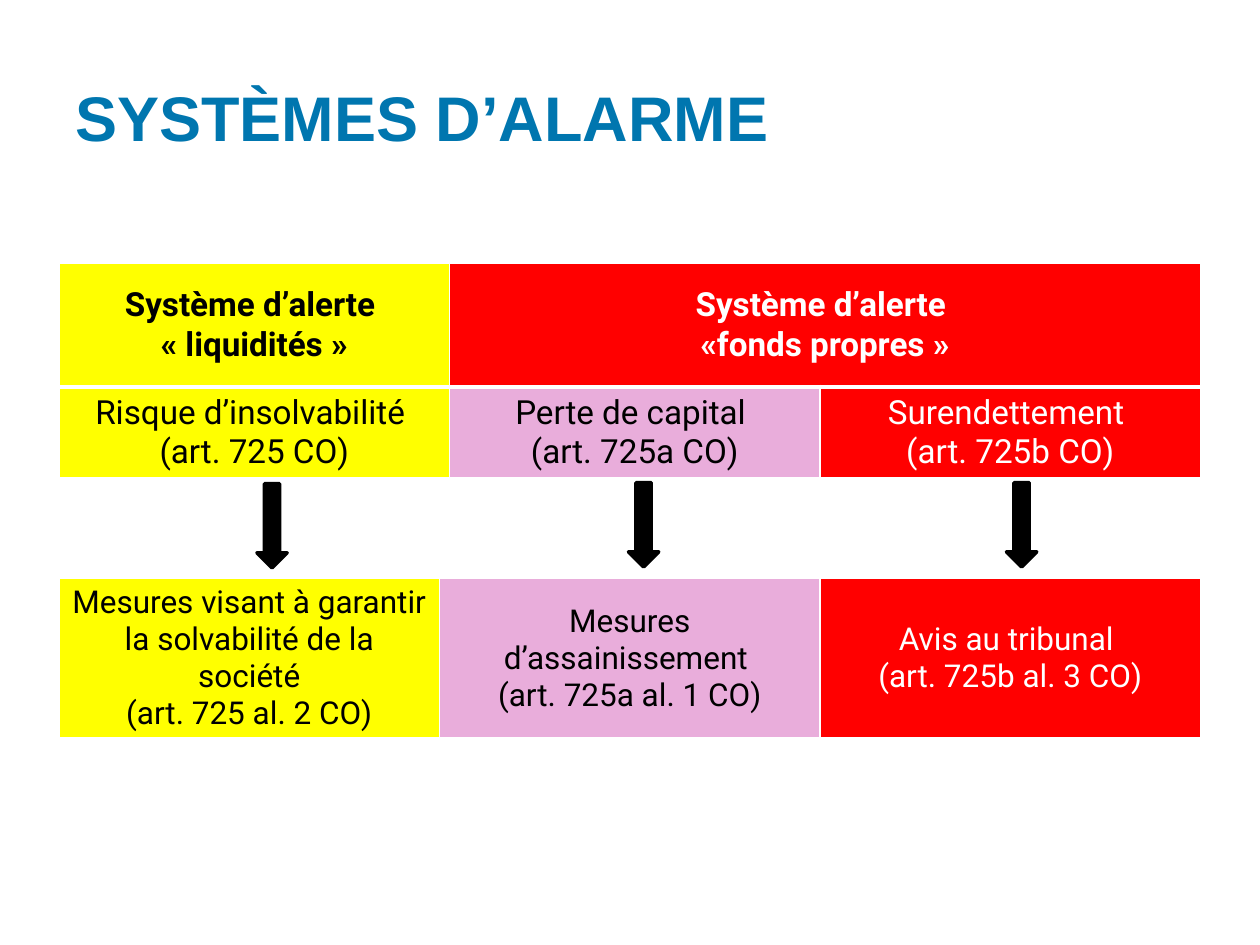
"""Build the slide on the alarm systems of the Swiss Code of Obligations."""
from dataclasses import dataclass

from lxml.etree import SubElement
from pptx import Presentation
from pptx.dml.color import RGBColor
from pptx.enum.shapes import MSO_SHAPE
from pptx.enum.text import MSO_ANCHOR, PP_ALIGN
from pptx.oxml.ns import qn
from pptx.util import Cm, Pt

COLORS = {
    "title": "0076AF",
    "black": "000000",
    "white": "FFFFFF",
    "yellow": "FFFF00",
    "pink": "E9ADDB",
    "red": "FF0000",
}


@dataclass(frozen=True)
class Step:
    lines: tuple[str, ...]
    fill: str
    ink: str = "black"
    bold: bool = False
    span: int = 1


@dataclass(frozen=True)
class Grid:
    top: float
    columns: tuple[float, ...]
    heights: tuple[float, ...]
    rows: tuple[tuple[Step, ...], ...]
    size: int
    bottom_borders: tuple[int, ...]


@dataclass(frozen=True)
class Arrow:
    left: float
    top: float


GRID_LEFT = 1.19
ALERTS = Grid(
    top=5.31,
    columns=(7.87, 7.47, 7.67),
    heights=(2.49, 1.78),
    rows=(
        (
            Step(("Système d’alerte ", "« liquidités »"), "yellow", bold=True),
            Step(("Système d’alerte ", "«fonds propres »"), "red", "white", True, 2),
        ),
        (
            Step(("Risque d’insolvabilité ", "(art. 725 CO)"), "yellow"),
            Step(("Perte de capital ", "(art. 725a CO)"), "pink"),
            Step(("Surendettement ", "(art. 725b CO)"), "red", "white"),
        ),
    ),
    size=19,
    bottom_borders=(3, 1),
)
MEASURES = Grid(
    top=11.66,
    columns=(7.67,) * 3,
    heights=(3.18,),
    rows=(
        (
            Step(
                ("Mesures visant à garantir la solvabilité de la société", "(art. 725 al. 2 CO)"),
                "yellow",
            ),
            Step(("Mesures d’assainissement ", "(art. 725a al. 1 CO)"), "pink"),
            Step(("Avis au tribunal ", "(art. 725b al. 3 CO)"), "red", "white"),
        ),
    ),
    size=18,
    bottom_borders=(3,),
)
ARROWS = (Arrow(5.18, 9.75), Arrow(12.67, 9.73), Arrow(20.29, 9.73))


def rgb(name: str) -> RGBColor:
    return RGBColor.from_string(COLORS[name])


def write(frame, lines, *, font="Roboto", size=18, color="black", bold=False,
          align=PP_ALIGN.CENTER) -> None:
    for index, line in enumerate(lines):
        paragraph = frame.add_paragraph() if index else frame.paragraphs[0]
        paragraph.alignment = align
        run = paragraph.add_run()
        run.text = line
        run.font.name = font
        run.font.size = Pt(size)
        run.font.bold = bold
        run.font.color.rgb = rgb(color)


def set_borders(cell, top: int, bottom: int) -> None:
    properties = cell._tc.get_or_add_tcPr()
    for side, width in (("L", 1), ("R", 1), ("T", top), ("B", bottom)):
        border = SubElement(properties, qn(f"a:ln{side}"), w=str(Pt(width)))
        fill = SubElement(border, qn("a:solidFill"))
        SubElement(fill, qn("a:srgbClr"), val=COLORS["white"])


def draw_grid(slide, grid: Grid) -> None:
    table = slide.shapes.add_table(
        len(grid.rows), len(grid.columns), Cm(GRID_LEFT), Cm(grid.top),
        Cm(sum(grid.columns)), Cm(sum(grid.heights)),
    ).table
    table.horz_banding = False
    table.first_row = False
    for column, width in zip(table.columns, grid.columns):
        column.width = Cm(width)
    above = 1
    for row, (steps, below) in enumerate(zip(grid.rows, grid.bottom_borders)):
        table.rows[row].height = Cm(grid.heights[row])
        column = 0
        for step in steps:
            last = column + step.span - 1
            if step.span > 1:
                table.cell(row, column).merge(table.cell(row, last))
            for part in range(column, last + 1):
                cell = table.cell(row, part)
                set_borders(cell, above, below)
                cell.fill.solid()
                cell.fill.fore_color.rgb = rgb(step.fill)
            origin = table.cell(row, column)
            origin.vertical_anchor = MSO_ANCHOR.MIDDLE
            write(origin.text_frame, step.lines, size=grid.size, color=step.ink, bold=step.bold)
            column = last + 1
        above = below


def draw_arrow(slide, arrow: Arrow) -> None:
    pointer = slide.shapes.add_shape(
        MSO_SHAPE.DOWN_ARROW, Cm(arrow.left), Cm(arrow.top), Cm(0.61), Cm(1.7))
    pointer.shadow.inherit = False
    pointer.fill.solid()
    pointer.fill.fore_color.rgb = rgb("black")
    pointer.line.color.rgb = rgb("black")
    pointer.line.width = Pt(2)


def main() -> None:
    deck = Presentation()
    deck.slide_width, deck.slide_height = Cm(25.4), Cm(19.05)
    slide = deck.slides.add_slide(deck.slide_layouts[5])
    heading = slide.shapes.title
    heading.left, heading.top, heading.width, heading.height = (
        Cm(1.27), Cm(0.76), Cm(22.86), Cm(3.18))
    heading.text_frame.vertical_anchor = MSO_ANCHOR.MIDDLE
    write(heading.text_frame, ("SYSTÈMES D’ALARME",), font="Arial", size=36,
          color="title", bold=True, align=PP_ALIGN.LEFT)
    for grid in (ALERTS, MEASURES):
        draw_grid(slide, grid)
    for arrow in ARROWS:
        draw_arrow(slide, arrow)
    deck.save("out.pptx")


if __name__ == "__main__":
    main()
